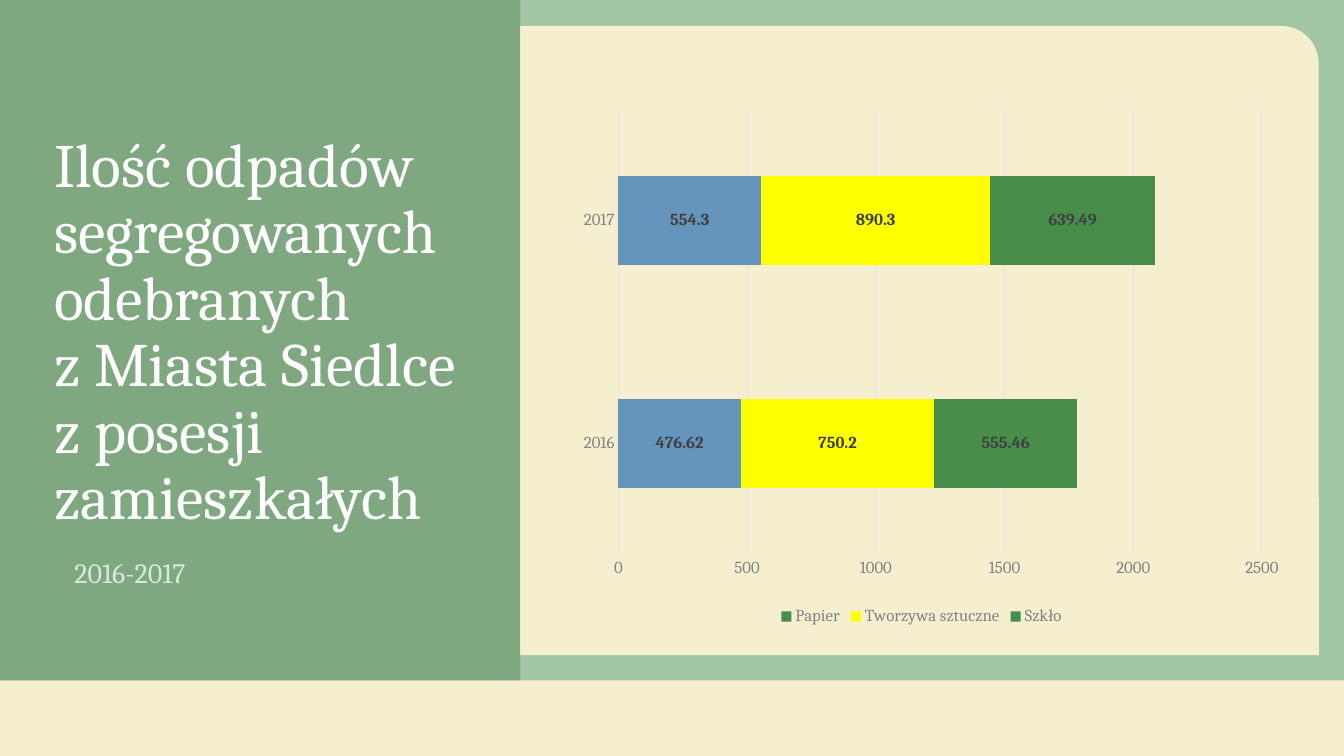
import lxml.etree
import pptx
import pptx.chart.data
import pptx.dml.color
import pptx.enum.chart
import pptx.enum.shapes
import pptx.enum.text
import pptx.oxml
import pptx.oxml.ns
import pptx.util
from dataclasses import dataclass

Pt = pptx.util.Pt
qn = pptx.oxml.ns.qn


@dataclass(frozen=True)
class Theme:
    font: str = "Cambria"
    cream: str = "F5EECF"
    green: str = "488E4A"
    dark_green: str = "366A38"
    pale_green: str = "D8EBD8"
    white: str = "FFFFFF"
    blue: str = "6595BC"
    yellow: str = "FFFF00"
    label: str = "404040"
    axis: str = "838383"
    grid: str = "E2E2E2"
    title_size: int = 44
    subtitle_size: int = 20
    chart_size: int = 12
    line_width: float = 0.75


def rgb(color):
    return pptx.dml.color.RGBColor.from_string(color)


class SlideBuilder:
    def __init__(self, prs, theme):
        self.theme = theme
        self.s = prs.slides.add_slide(prs.slide_layouts[5])

    def style_font(self, font, size, color, bold=False):
        font.name, font.size, font.bold = self.theme.font, Pt(size), bold
        font.color.rgb = rgb(color)

    def style_line(self, line):
        line.color.rgb = rgb(self.theme.grid)
        line.width = Pt(self.theme.line_width)

    def panel(self, box, color, opacity=100, corner=None):
        """Add a borderless panel; corner rounds its top right."""
        shapes = pptx.enum.shapes.MSO_SHAPE
        kind = shapes.RECTANGLE if corner is None else shapes.ROUND_1_RECTANGLE
        sp = self.s.shapes.add_shape(kind, *map(Pt, box))
        sp.shadow.inherit = False
        sp.fill.solid()
        sp.fill.fore_color.rgb = rgb(color)
        sp.line.fill.background()
        if corner is not None:
            sp.adjustments[0] = corner
        if opacity < 100:
            clr = sp._element.spPr.find(".//" + qn("a:srgbClr"))
            lxml.etree.SubElement(clr, qn("a:alpha")).set("val", str(opacity * 1000))

    def fill_text(self, sp, text, size, color, anchor):
        tf = sp.text_frame
        tf.text = text
        tf.word_wrap = True
        tf.auto_size = pptx.enum.text.MSO_AUTO_SIZE.NONE
        tf.vertical_anchor = anchor
        p = tf.paragraphs[0]
        p.alignment = pptx.enum.text.PP_ALIGN.LEFT
        p.line_spacing = 0.9
        for r in p.runs:
            self.style_font(r.font, size, color)

    def title(self, box, text):
        sp = self.s.shapes.title
        sp.left, sp.top, sp.width, sp.height = map(Pt, box)
        self.s.shapes._spTree.append(sp._element)  # bring in front of the panels
        self.fill_text(sp, text, self.theme.title_size, self.theme.white,
                       pptx.enum.text.MSO_ANCHOR.BOTTOM)

    def subtitle(self, box, text):
        sp = self.s.shapes.add_textbox(*map(Pt, box))
        self.fill_text(sp, text, self.theme.subtitle_size, self.theme.pale_green,
                       pptx.enum.text.MSO_ANCHOR.TOP)

    def stacked_bars(self, box, categories, series, plot_area):
        """Add the chart; series holds (name, values, colour, bar colour)."""
        t, enum = self.theme, pptx.enum.chart
        data = pptx.chart.data.CategoryChartData()
        data.categories = categories
        for name, values, _, _ in series:
            data.add_series(name, values)
        chart = self.s.shapes.add_chart(
            enum.XL_CHART_TYPE.BAR_STACKED, *map(Pt, box), data).chart
        chart.has_title = False
        self.style_font(chart.font, t.chart_size, t.label)

        plot = chart.plots[0]
        plot.gap_width, plot.overlap, plot.vary_by_categories = 150, 100, False
        for ser, (_, values, color, bar_color) in zip(plot.series, series):
            ser.format.fill.solid()
            ser.format.fill.fore_color.rgb = rgb(color)
            if bar_color != color:
                for i in range(len(values)):
                    fill = ser.points[i].format.fill
                    fill.solid()
                    fill.fore_color.rgb = rgb(bar_color)
            labels = ser.data_labels
            labels.show_value = True
            labels.position = enum.XL_LABEL_POSITION.CENTER
            self.style_font(labels.font, t.chart_size, t.label, bold=True)

        for axis in (chart.category_axis, chart.value_axis):
            axis.major_tick_mark = axis.minor_tick_mark = enum.XL_TICK_MARK.NONE
            self.style_font(axis.tick_labels.font, t.chart_size, t.axis)
        self.style_line(chart.category_axis.format.line)
        values_axis = chart.value_axis
        values_axis.format.line.fill.background()
        values_axis.minimum_scale, values_axis.maximum_scale = 0, 2500
        values_axis.major_unit = 500
        values_axis.has_major_gridlines = True
        self.style_line(values_axis.major_gridlines.format.line)

        chart.has_legend = True
        chart.legend.position = enum.XL_LEGEND_POSITION.BOTTOM
        chart.legend.include_in_layout = False
        self.style_font(chart.legend.font, t.chart_size, t.axis)
        self.place_plot(chart, plot_area)

    def place_plot(self, chart, plot_area):
        """Fix the inner plot area, given as fractions of the chart."""
        area = chart._chartSpace.find(".//" + qn("c:plotArea"))
        for old in area.findall(qn("c:layout")):
            area.remove(old)
        layout = lxml.etree.Element(qn("c:layout"))
        manual = lxml.etree.SubElement(layout, qn("c:manualLayout"))
        settings = [("layoutTarget", "inner"), ("xMode", "edge"), ("yMode", "edge")]
        settings += zip("xywh", plot_area)
        for tag, value in settings:
            lxml.etree.SubElement(manual, qn("c:" + tag)).set("val", str(value))
        area.insert(0, layout)


def main():
    prs = pptx.Presentation()
    prs.slide_width, prs.slide_height = Pt(960), Pt(540)
    t = Theme()
    b = SlideBuilder(prs, t)
    side, band_top = 371.5, 486

    b.panel((0, band_top, 960, 540 - band_top), t.cream)
    b.panel((0, 0, 960, band_top), t.green, opacity=50)
    b.panel((side, 18.5, 570.5, 449.5), t.cream, corner=0.06)
    b.panel((0, 0, side, band_top), t.dark_green, opacity=32)

    b.title((31.5, 18.5, 312, 366),
            "Ilość odpadów segregowanych odebranych\vz Miasta Siedlce\v"
            "z posesji zamieszkałych")
    b.subtitle((46, 396, 298, 72), "2016-2017")
    b.stacked_bars(
        (391, 36.5, 534.5, 413.5), ["2016", "2017"],
        [("Papier", (476.62, 554.3), t.green, t.blue),
         ("Tworzywa sztuczne", (750.2, 890.3), t.yellow, t.yellow),
         ("Szkło", (555.46, 639.49), t.green, t.green)],
        plot_area=(0.095, 0.1, 0.86, 0.77))
    prs.save("out.pptx")


if __name__ == "__main__":
    main()
